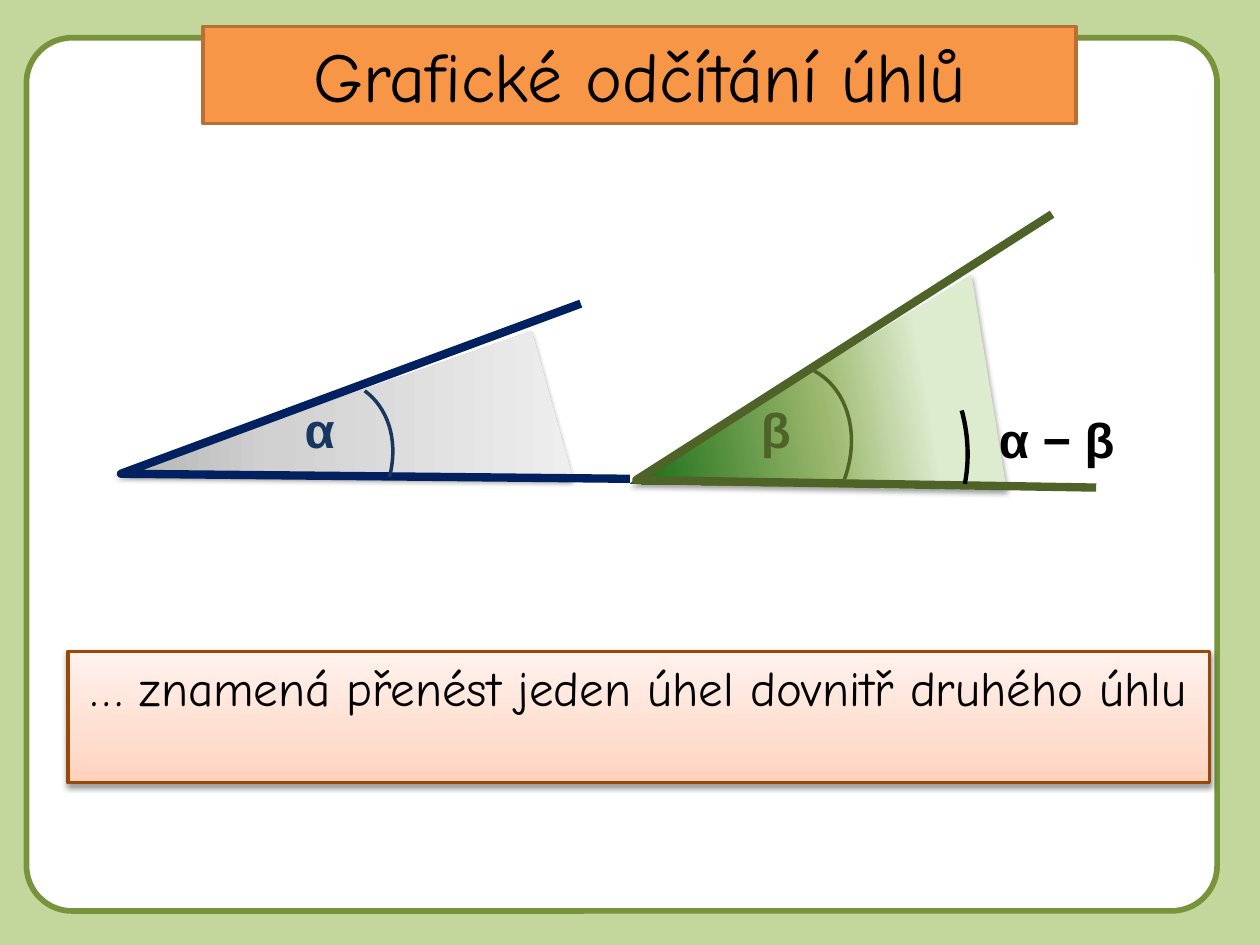
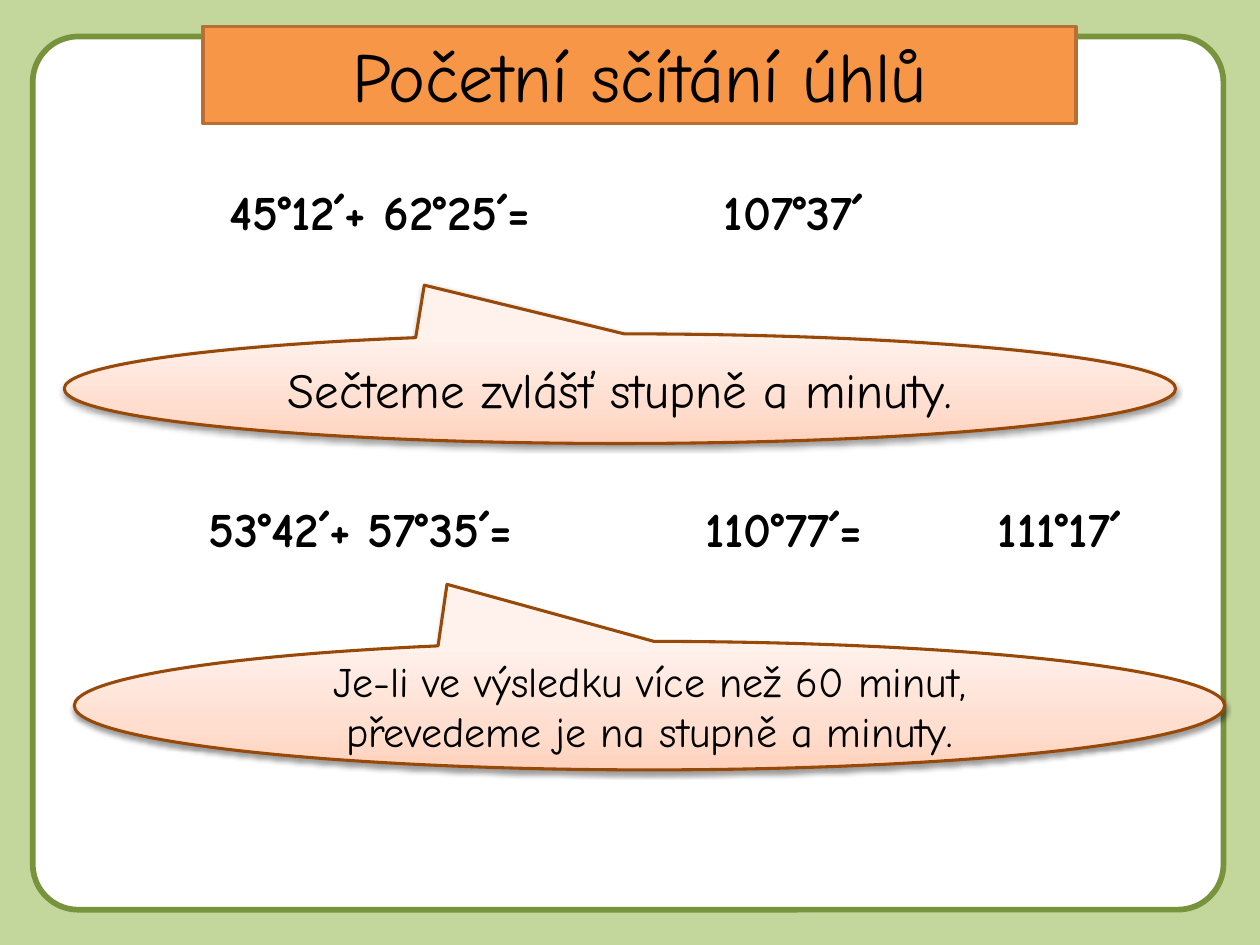
from dataclasses import dataclass

from lxml import etree
from pptx import Presentation
from pptx.dml.color import RGBColor
from pptx.enum.shapes import MSO_SHAPE
from pptx.enum.text import MSO_ANCHOR, PP_ALIGN
from pptx.oxml.ns import qn
from pptx.util import Inches, Pt

RECTANGLE = MSO_SHAPE.RECTANGLE
ROUNDED = MSO_SHAPE.ROUNDED_RECTANGLE
CALLOUT = MSO_SHAPE.OVAL_CALLOUT
ARC = MSO_SHAPE.ARC
TOP, MIDDLE = MSO_ANCHOR.TOP, MSO_ANCHOR.MIDDLE
LEFT, CENTER = PP_ALIGN.LEFT, PP_ALIGN.CENTER


@dataclass(frozen=True)
class Theme:
    background: str = "C3D69B"
    frame: str = "77933C"
    white: str = "FFFFFF"
    black: str = "000000"
    title_fill: str = "F79646"
    title_line: str = "B76F34"
    note_line: str = "984807"
    note_gradient: tuple = ((0, "FFD2BD"), (35, "FFDED0"), (100, "FFF2ED"))
    font: str = "Comic Neue"
    symbol_font: str = "Arial"
    title_size: int = 40
    body_size: int = 28
    small_size: int = 24


THEME = Theme()
TITLE_BOX = (1.61, 0.21, 6.93, 0.77)
FRAME_SIZE = (9.45, 6.93)

SUBTRACTION = {
    "title": "Grafické odčítání úhlů",
    "frame_at": (0.21, 0.3),
    "note": "… znamená přenést jeden úhel dovnitř druhého úhlu",
    "note_box": (0.54, 5.17, 9.06, 1.04),
}
ANGLES = [
    {
        "label": "β", "label_box": (5.94, 3.12, 0.55, 0.57), "label_color": "4F6228",
        "sector": [(7.71, 2.18), (5, 3.84), (7.99, 3.89)],
        "gradient": ((24, "DDEBCF"), (50, "9CB86E"), (100, "156B13")), "direction": 170,
        "rays": [(8.35, 1.7), (5.05, 3.81), (8.7, 3.87)], "ray_color": "4F6228",
        "arc_box": (5.46, 2.85, 1.26, 1.57), "arc_rotation": 28.3, "arc_span": (270, 347.23),
    },
    {
        "label": "α", "label_box": (2.32, 3.12, 0.55, 0.57), "label_color": "17375E",
        "sector": [(4.22, 2.63), (0.91, 3.78), (4.55, 3.81)],
        "gradient": ((11, "BDBDBD"), (35, "D1D1D1"), (100, "EEEEEE")), "direction": 0,
        "rays": [(4.61, 2.41), (0.96, 3.76), (5, 3.8)], "ray_color": "002060",
        "arc_box": (1.8, 2.95, 1.26, 1.57), "arc_rotation": 36.4, "arc_span": (270, 328.13),
    },
]
DIFFERENCE = {
    "label": "α − β", "label_box": (7.83, 3.2, 1.65, 0.57),
    "arc_box": (4.73, 2.15, 2.98, 2.67), "arc_rotation": 26.7, "arc_span": (324.17, 347.23),
}

ADDITION = {"title": "Početní sčítání úhlů", "frame_at": (0.26, 0.29)}
TERM_HEIGHT = 0.57
SUM_RIGHT_INSET = 0.52
EXAMPLES = [
    {
        "left": 1.14, "top": 1.39,
        "terms": [("45°12´+ 62°25´=", 4.17), ("107°37´", 1.97)],
        "note": "Sečteme zvlášť stupně a minuty.",
        "note_box": (0.51, 2.65, 8.82, 0.87), "note_size": THEME.body_size,
    },
    {
        "left": 1.06, "top": 3.91,
        "terms": [("53°42´+ 57°35´=", 4.02), ("110°77´=", 2.28), ("111°17´", 2.09)],
        "note": "Je-li ve výsledku více než 60 minut, převedeme je na stupně a minuty.",
        "note_box": (0.59, 5.09, 9.13, 1.02), "note_size": THEME.small_size,
    },
]


def color(value):
    return RGBColor.from_string(value)


def set_line(shape, value, width):
    shape.line.color.rgb = color(value)
    shape.line.width = Pt(width)


def set_gradient(shape, stops, direction):
    shape.fill.background()
    properties = shape._element.spPr
    gradient = etree.Element(qn("a:gradFill"), rotWithShape="1")
    stop_list = etree.SubElement(gradient, qn("a:gsLst"))
    for position, value in stops:
        stop = etree.SubElement(stop_list, qn("a:gs"), pos=str(position * 1000))
        etree.SubElement(stop, qn("a:srgbClr"), val=value)
    etree.SubElement(gradient, qn("a:lin"), ang=str(direction * 60000), scaled="0")
    properties.replace(properties.find(qn("a:noFill")), gradient)


def set_shadow(shape):
    effects = shape._element.spPr.find(qn("a:effectLst"))
    shadow = etree.SubElement(
        effects, qn("a:outerShdw"), blurRad=str(Pt(3.1)), dist=str(Pt(1.6)),
        dir=str(90 * 60000), rotWithShape="0")
    shade = etree.SubElement(shadow, qn("a:srgbClr"), val=THEME.black)
    etree.SubElement(shade, qn("a:alpha"), val="38000")


def add_shape(shapes, kind, box, fill=None, line=None, line_width=2):
    shape = shapes.add_shape(kind, *map(Inches, box))
    shape.shadow.inherit = False
    if fill:
        shape.fill.solid()
        shape.fill.fore_color.rgb = color(fill)
    else:
        shape.fill.background()
    if line:
        set_line(shape, line, line_width)
    else:
        shape.line.fill.background()
    return shape


def write(shape, text, size=THEME.body_size, font=THEME.font, value=THEME.black,
          bold=False, align=CENTER, anchor=TOP):
    frame = shape.text_frame
    frame.text = text
    frame.word_wrap = True
    frame.vertical_anchor = anchor
    paragraph = frame.paragraphs[0]
    paragraph.alignment = align
    run_font = paragraph.runs[0].font
    run_font.name, run_font.size, run_font.bold = font, Pt(size), bold
    run_font.color.rgb = color(value)


def add_outline(shapes, points, close):
    corners = [(Inches(x), Inches(y)) for x, y in points]
    builder = shapes.build_freeform(*corners[0])
    builder.add_line_segments(corners[1:], close=close)
    shape = builder.convert_to_shape()
    shape.shadow.inherit = False
    return shape


def add_arc(shapes, angle, value, width):
    arc = add_shape(shapes, ARC, angle["arc_box"], line=value, line_width=width)
    arc.rotation = angle["arc_rotation"]
    for index, degrees in enumerate(angle["arc_span"]):
        arc.adjustments[index] = degrees * 0.6


def add_label(shapes, angle, value):
    label = shapes.add_textbox(*map(Inches, angle["label_box"]))
    write(label, angle["label"], font=THEME.symbol_font, value=value, bold=True, align=LEFT)


def add_angle(slide, angle):
    shapes = slide.shapes.add_group_shape().shapes
    sector = add_outline(shapes, angle["sector"], True)
    set_gradient(sector, angle["gradient"], angle["direction"])
    sector.line.fill.background()
    set_shadow(sector)
    rays = add_outline(shapes, angle["rays"], False)
    rays.fill.background()
    set_line(rays, angle["ray_color"], 4.75)
    add_arc(shapes, angle, angle["label_color"], 2)
    add_label(shapes, angle, angle["label_color"])


def add_note(slide, kind, box, line_width):
    note = add_shape(slide.shapes, kind, box, line=THEME.note_line, line_width=line_width)
    set_gradient(note, THEME.note_gradient, 270)
    set_shadow(note)
    return note


def add_slide(presentation, content):
    slide = presentation.slides.add_slide(presentation.slide_layouts[6])
    slide.background.fill.solid()
    slide.background.fill.fore_color.rgb = color(THEME.background)
    frame = add_shape(slide.shapes, ROUNDED, content["frame_at"] + FRAME_SIZE,
                      THEME.white, THEME.frame, 3.25)
    frame.adjustments[0] = 0.052
    title = add_shape(slide.shapes, RECTANGLE, TITLE_BOX, THEME.title_fill, THEME.title_line)
    write(title, content["title"], THEME.title_size)
    return slide


def build_subtraction(presentation):
    slide = add_slide(presentation, SUBTRACTION)
    note = add_note(slide, RECTANGLE, SUBTRACTION["note_box"], 2)
    write(note, SUBTRACTION["note"])
    for angle in ANGLES:
        add_angle(slide, angle)
    add_label(slide.shapes, DIFFERENCE, THEME.black)
    add_arc(slide.shapes, DIFFERENCE, THEME.black, 2.5)


def build_addition(presentation):
    slide = add_slide(presentation, ADDITION)
    for example in EXAMPLES:
        left = example["left"]
        for index, (text, width) in enumerate(example["terms"]):
            box = (left, example["top"], width, TERM_HEIGHT)
            term = add_shape(slide.shapes, RECTANGLE, box, THEME.white)
            write(term, text, bold=True)
            if index == 0:
                term.text_frame.margin_right = Inches(SUM_RIGHT_INSET)
            left += width
        note = add_note(slide, CALLOUT, example["note_box"], 1.75)
        note.adjustments[0] = -0.176
        note.adjustments[1] = -0.944
        write(note, example["note"], example["note_size"], anchor=MIDDLE)


def main():
    presentation = Presentation()
    presentation.slide_width = Inches(10)
    presentation.slide_height = Inches(7.5)
    build_subtraction(presentation)
    build_addition(presentation)
    presentation.save("out.pptx")


if __name__ == "__main__":
    main()
